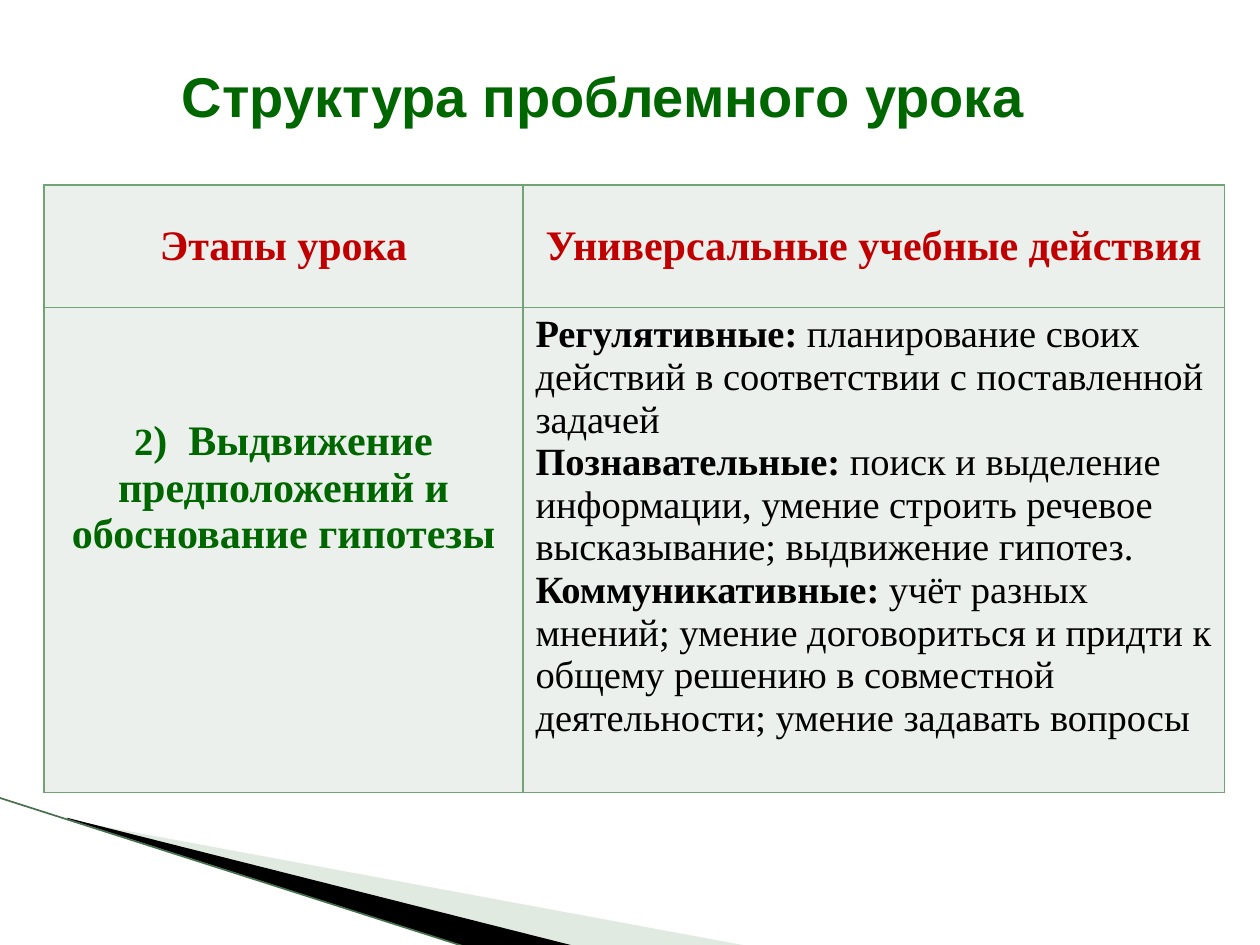
import dataclasses
import typing

import lxml.etree
import pptx
import pptx.dml.color
import pptx.enum.shapes
import pptx.enum.text
import pptx.oxml
import pptx.oxml.ns
import pptx.util

Inches = pptx.util.Inches
Pt = pptx.util.Pt
Color = pptx.dml.color.RGBColor
Align = pptx.enum.text.PP_ALIGN
Anchor = pptx.enum.text.MSO_ANCHOR
qn = pptx.oxml.ns.qn

GREEN = Color(0x00, 0x66, 0x00)
RED = Color(0xC0, 0x00, 0x00)
BLACK = Color(0x00, 0x00, 0x00)
SAGE = Color(0xB3, 0xCB, 0xB5)
EDGE = Color(0x47, 0x70, 0x4F)
BORDER = Color(0x72, 0xA3, 0x76)
PALE = Color(0xEB, 0xF0, 0xEC)
SERIF = "Times New Roman"
SANS = "Arial"


@dataclasses.dataclass
class Piece:
    text: str
    size: float
    color: Color = BLACK
    bold: bool = True
    font: str = SERIF


@dataclasses.dataclass
class Entry:
    row: int
    col: int
    lines: list[list[Piece]]
    align: Align = Align.CENTER
    anchor: Anchor = Anchor.TOP
    top: float = 0.05


@dataclasses.dataclass
class Wedge:
    box: tuple[float, float, float, float]
    points: list[tuple[float, float]]
    color: Color
    alpha: typing.Optional[int] = None


def skill(name: str, text: str) -> list[Piece]:
    return [Piece(name, 22), Piece(" " + text, 22, bold=False)]


WEDGES = [
    Wedge((0.78, 5.47, 4.16, 1.58),
          [(0.55, 6.51), (5.95, 7.51), (4.56, 7.51), (0.55, 6.5)], SAGE, 40),
    Wedge((-0.06, 6.33, 4.16, 0.92),
          [(0.53, 6.49), (4.57, 7.51), (3.72, 7.52), (0.54, 6.5)], BLACK),
]
ENTRIES = [
    Entry(0, 0, [[Piece("Этапы урока", 24, RED)]], anchor=Anchor.MIDDLE),
    Entry(0, 1, [[Piece("Универсальные учебные действия", 24, RED)]],
          anchor=Anchor.MIDDLE),
    Entry(1, 0, [[
        Piece("2", 22, GREEN),
        Piece(")  Выдвижение предположений и обоснование гипотезы", 24, GREEN),
    ]], top=0.88),
    Entry(1, 1, [
        skill("Регулятивные:",
              "планирование своих действий в соответствии с поставленной задачей"),
        skill("Познавательные:",
              "поиск и выделение информации, умение строить речевое "
              "высказывание; выдвижение гипотез."),
        skill("Коммуникативные:",
              "учёт разных мнений; умение договориться и придти к общему решению "
              "в совместной деятельности; умение задавать вопросы"),
    ], align=Align.LEFT),
]


def write(frame, lines: list[list[Piece]], align: Align) -> None:
    frame.word_wrap = True
    for i, line in enumerate(lines):
        para = frame.paragraphs[0] if i == 0 else frame.add_paragraph()
        para.alignment = align
        for piece in line:
            run = para.add_run()
            run.text = piece.text
            run.font.name = piece.font
            run.font.size = Pt(piece.size)
            run.font.bold = piece.bold
            run.font.color.rgb = piece.color


def fit_box(shape, box: tuple[float, float, float, float]) -> None:
    left, top, width, height = map(Inches, box)
    props = shape._element.spPr
    for point in props.iter(qn("a:pt")):
        point.set("x", str(int(point.get("x")) + shape.left - left))
        point.set("y", str(int(point.get("y")) + shape.top - top))
    track = props.find(".//" + qn("a:path"))
    track.set("w", str(width))
    track.set("h", str(height))
    shape.left, shape.top, shape.width, shape.height = left, top, width, height


def draw_wedge(slide, wedge: Wedge) -> None:
    first, *rest = [(Inches(x), Inches(y)) for x, y in wedge.points]
    pen = slide.shapes.build_freeform(*first)
    pen.add_line_segments(rest, close=True)
    shape = pen.convert_to_shape()
    fit_box(shape, wedge.box)
    shape.shadow.inherit = False
    shape.line.fill.background()
    shape.fill.solid()
    shape.fill.fore_color.rgb = wedge.color
    if wedge.alpha is not None:
        tint = shape.fill._xPr.find(".//" + qn("a:srgbClr"))
        lxml.etree.SubElement(tint, qn("a:alpha"), val=str(wedge.alpha * 1000))


def draw_edge(slide) -> None:
    edge = slide.shapes.add_connector(
        pptx.enum.shapes.MSO_CONNECTOR.STRAIGHT,
        Inches(-0.01), Inches(6.33), Inches(3.71), Inches(7.52))
    edge.line.color.rgb = EDGE
    edge.line.width = Pt(0.95)
    lxml.etree.SubElement(edge._element.spPr, qn("a:effectLst"))


def frame_cell(cell) -> None:
    props = cell._tc.get_or_add_tcPr()
    for side in ("L", "R", "T", "B"):
        line = lxml.etree.SubElement(props, qn("a:ln" + side), w=str(Pt(1)))
        fill = lxml.etree.SubElement(line, qn("a:solidFill"))
        lxml.etree.SubElement(fill, qn("a:srgbClr"), val=str(BORDER))


def draw_table(slide, entries: list[Entry]) -> None:
    cols, rows = (3.8, 5.57), (0.97, 3.85)
    table = slide.shapes.add_table(
        len(rows), len(cols), Inches(0.35), Inches(1.47),
        Inches(sum(cols)), Inches(sum(rows))).table
    for col, width in zip(table.columns, cols):
        col.width = Inches(width)
    for row, height in zip(table.rows, rows):
        row.height = Inches(height)
    for entry in entries:
        cell = table.cell(entry.row, entry.col)
        frame_cell(cell)
        cell.fill.solid()
        cell.fill.fore_color.rgb = PALE
        cell.vertical_anchor = entry.anchor
        cell.margin_top = Inches(entry.top)
        write(cell.text_frame, entry.lines, entry.align)


def draw_title(slide) -> None:
    box = slide.shapes.add_textbox(
        Inches(0.51), Inches(0.44), Inches(8.43), Inches(0.64))
    title = Piece(" Структура проблемного урока", 32, GREEN, font=SANS)
    write(box.text_frame, [[title]], Align.CENTER)


def main() -> None:
    deck = pptx.Presentation()
    deck.slide_width = Inches(10)
    deck.slide_height = Inches(7.5)
    slide = deck.slides.add_slide(deck.slide_layouts[6])
    for wedge in WEDGES:
        draw_wedge(slide, wedge)
    draw_edge(slide)
    draw_table(slide, ENTRIES)
    draw_title(slide)
    deck.save("out.pptx")


if __name__ == "__main__":
    main()
